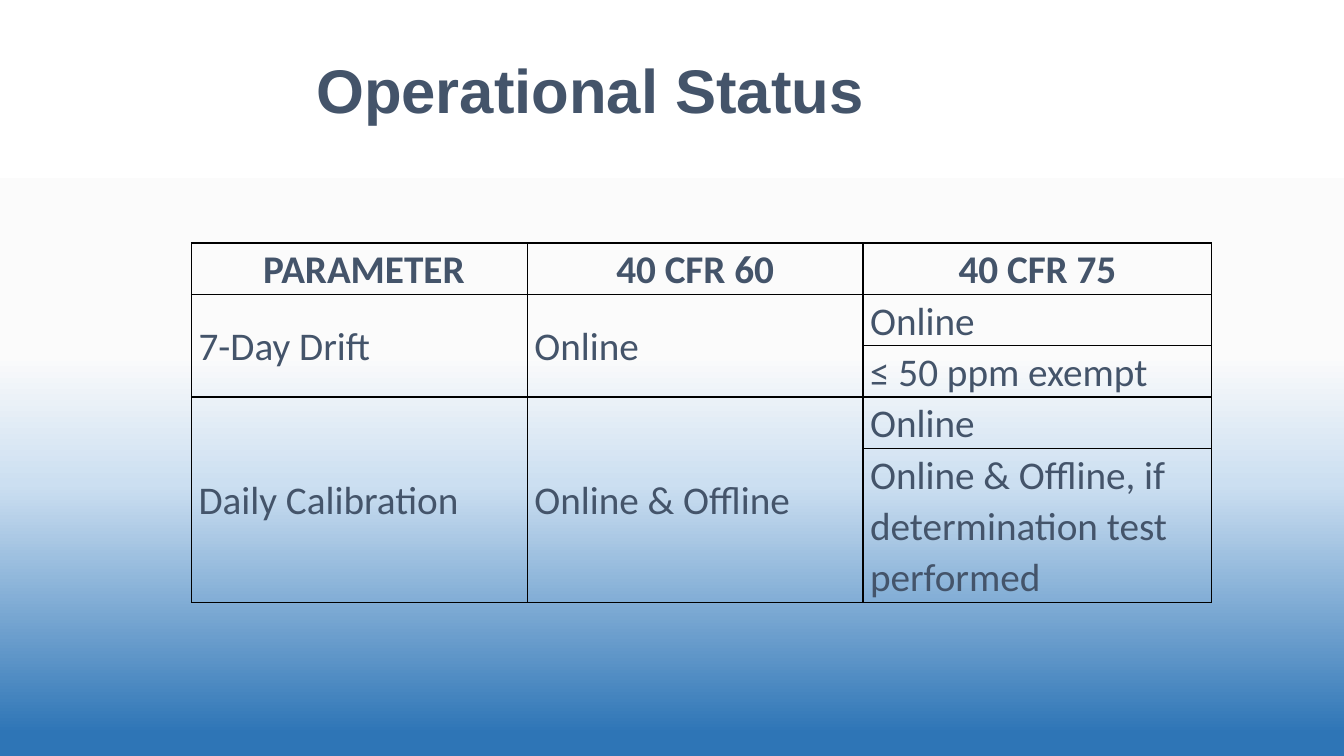
from lxml.etree import SubElement
from pptx import Presentation
from pptx.dml.color import RGBColor
from pptx.enum.text import MSO_ANCHOR, PP_ALIGN
from pptx.oxml.ns import qn
from pptx.util import Inches, Pt

COLORS = {"text": "44546A", "border": "000000"}
BACKGROUND_STOPS = [(0, "FFFFFF"), (47, "FBFBFB"), (64, "CCDFF1"), (97, "2E75B6")]
COLUMN_WIDTHS = [3.33, 3.33, 3.46]
ROW_HEIGHTS = [0.51, 0.51, 0.51, 0.51, 1.53]
HEADERS = [" PARAMETER", "40 CFR 60", "40 CFR 75"]
PARAMETERS = [
    ("7-Day Drift", "Online", ["Online", "≤ 50 ppm exempt"]),
    ("Daily Calibration", "Online & Offline",
     ["Online", "Online & Offline, if determination test performed"]),
]


def paint_background(page):
    fill = page.background.fill
    fill.gradient()
    fill.gradient_angle = 270
    stops = page.element.find(".//" + qn("a:gsLst"))
    for stop in list(stops):
        stops.remove(stop)
    for position, color in BACKGROUND_STOPS:
        stop = SubElement(stops, qn("a:gs"), pos=str(position * 1000))
        SubElement(stop, qn("a:srgbClr"), val=color)


def write_text(frame, text, font, size, bold, align, spacing):
    para = frame.paragraphs[0]
    para.alignment = align
    para.line_spacing = spacing
    span = para.add_run()
    span.text = text
    span.font.name = font
    span.font.size = Pt(size)
    span.font.bold = bold
    span.font.color.rgb = RGBColor.from_string(COLORS["text"])


def add_title(page, text):
    title = page.shapes.title
    title.left, title.top = Inches(0.71), Inches(0.5)
    title.width, title.height = Inches(10.29), Inches(0.86)
    title.text_frame.vertical_anchor = MSO_ANCHOR.MIDDLE
    write_text(title.text_frame, text, "Arial", 44, True, PP_ALIGN.CENTER, 0.9)


def format_cell(cell):
    cell.margin_left = cell.margin_right = Inches(0.07)
    cell.margin_top = cell.margin_bottom = 0
    properties = cell._tc.get_or_add_tcPr()
    for side in ("lnL", "lnR", "lnT", "lnB"):
        line = SubElement(properties, qn(f"a:{side}"), w=str(Pt(1)))
        fill = SubElement(line, qn("a:solidFill"))
        SubElement(fill, qn("a:srgbClr"), val=COLORS["border"])
    cell.fill.background()


def write_body(cell, text):
    cell.vertical_anchor = MSO_ANCHOR.MIDDLE
    write_text(cell.text_frame, text, "Calibri", 28, False, PP_ALIGN.LEFT, 1.07)


def add_status_table(page):
    table = page.shapes.add_table(
        len(ROW_HEIGHTS), len(COLUMN_WIDTHS), Inches(1.9), Inches(2.41),
        Inches(sum(COLUMN_WIDTHS)), Inches(sum(ROW_HEIGHTS))).table
    table.horz_banding = False
    table.first_row = False
    for column, width in zip(table.columns, COLUMN_WIDTHS):
        column.width = Inches(width)
    for row, height in zip(table.rows, ROW_HEIGHTS):
        row.height = Inches(height)
    for cell in table.iter_cells():
        format_cell(cell)
    for column, header in enumerate(HEADERS):
        write_text(table.cell(0, column).text_frame, header,
                   "Calibri", 28, True, PP_ALIGN.CENTER, 1.07)
    top = 1
    for parameter, part_60, part_75 in PARAMETERS:
        for column, text in enumerate((parameter, part_60)):
            cell = table.cell(top, column)
            cell.merge(table.cell(top + len(part_75) - 1, column))
            write_body(cell, text)
        for offset, text in enumerate(part_75):
            write_body(table.cell(top + offset, 2), text)
        top += len(part_75)


def main():
    deck = Presentation()
    deck.slide_width, deck.slide_height = Inches(13.33), Inches(7.5)
    page = deck.slides.add_slide(deck.slide_layouts[5])
    paint_background(page)
    add_title(page, "Operational Status")
    add_status_table(page)
    deck.save("out.pptx")


if __name__ == "__main__":
    main()
